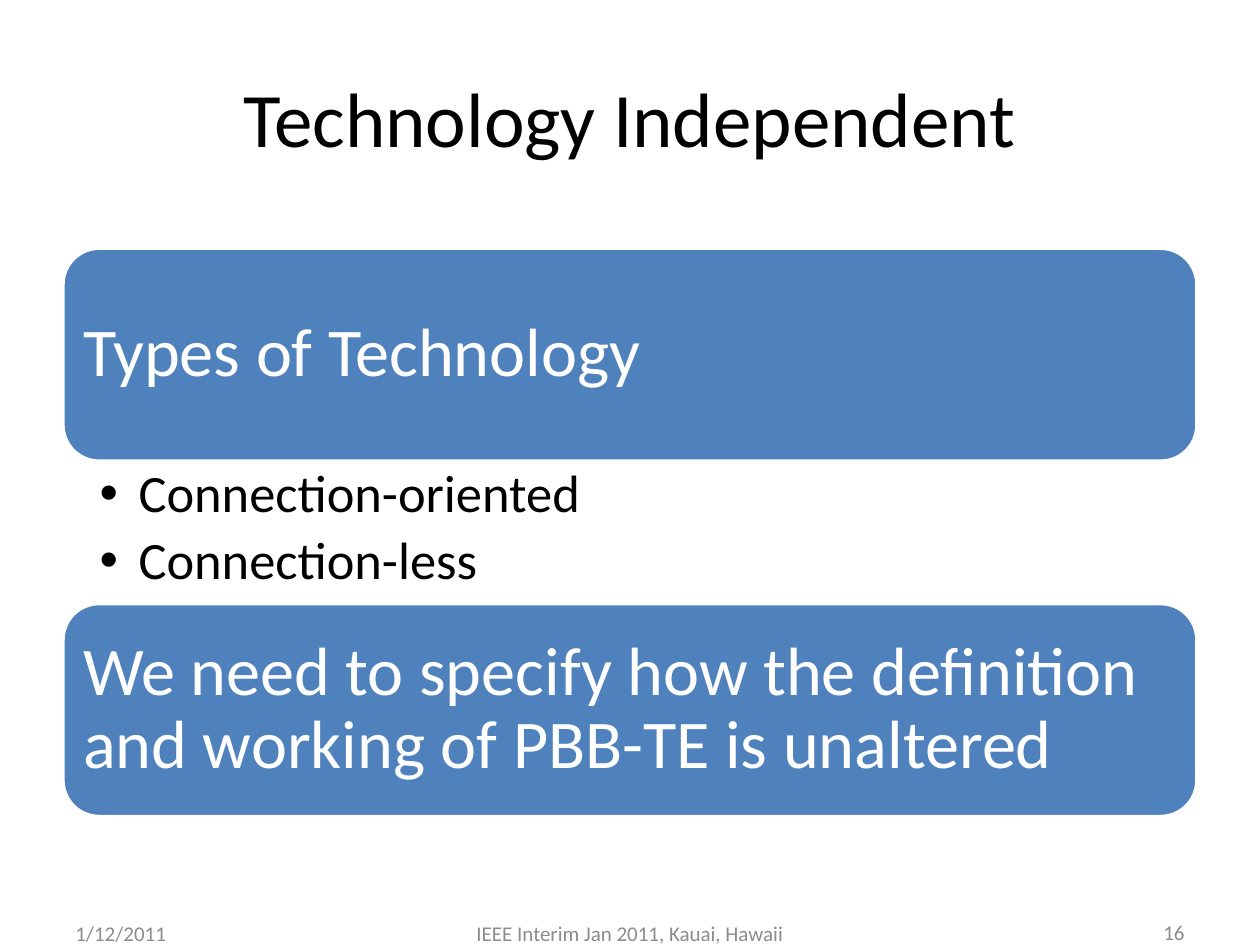
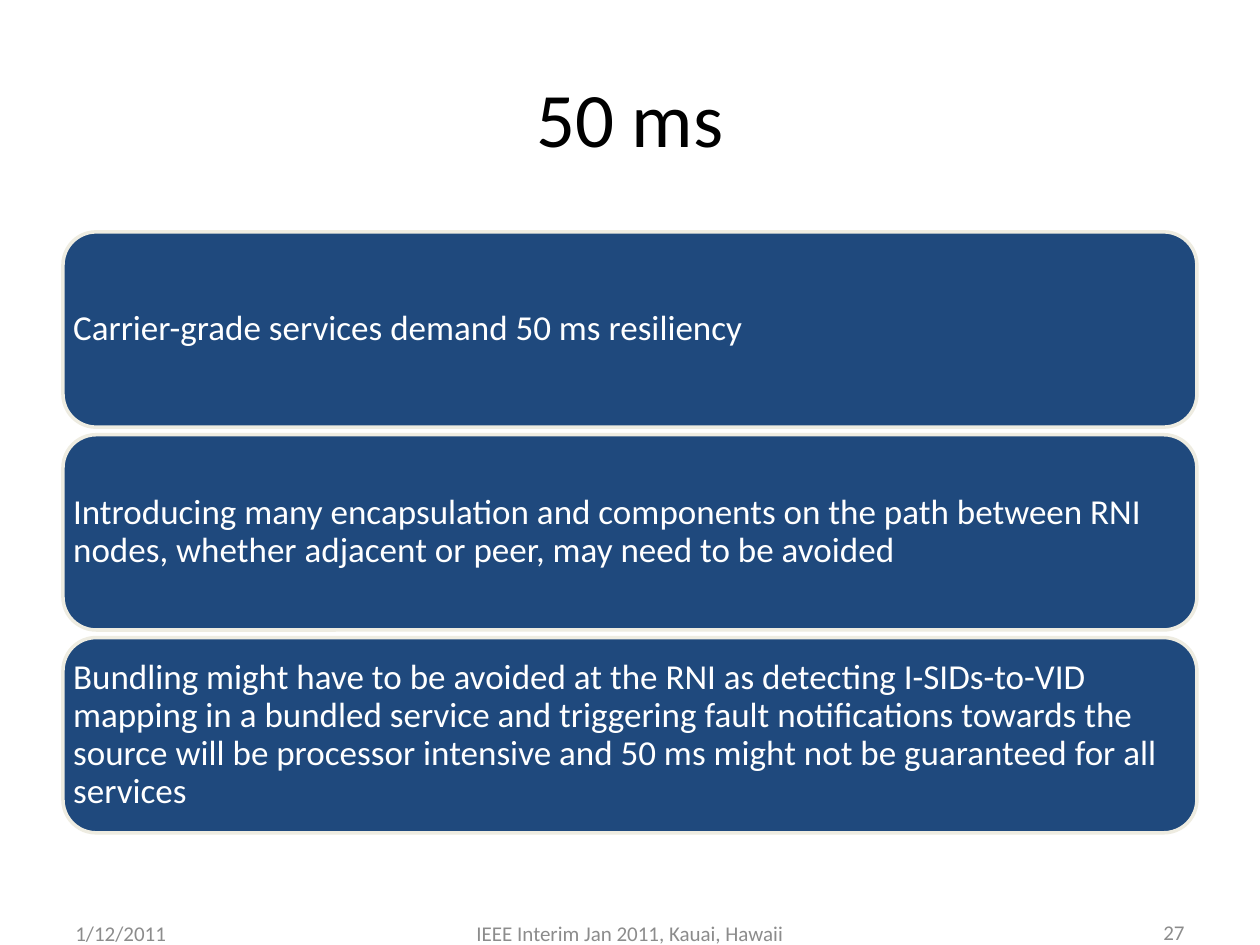
from lxml import etree
from pptx import Presentation
from pptx.dml.color import RGBColor
from pptx.enum.shapes import MSO_SHAPE
from pptx.enum.text import MSO_ANCHOR, PP_ALIGN
from pptx.oxml.ns import qn
from pptx.util import Inches, Pt

ROUND = MSO_SHAPE.ROUNDED_RECTANGLE
TOP, MID = MSO_ANCHOR.TOP, MSO_ANCHOR.MIDDLE
LEFT, CENTER, RIGHT = PP_ALIGN.LEFT, PP_ALIGN.CENTER, PP_ALIGN.RIGHT

BLACK = RGBColor(0x00, 0x00, 0x00)
WHITE = RGBColor(0xFF, 0xFF, 0xFF)
GRAY = RGBColor(0x8C, 0x8C, 0x8C)
BLUE = RGBColor(0x4F, 0x81, 0xBD)
NAVY = RGBColor(0x1F, 0x49, 0x7D)
CREAM = RGBColor(0xEE, 0xEC, 0xE1)

FONT = "Calibri"
COLS, ROWS = 20, 15
EDGE, SPAN = 1, 18
CURVE = 0.17
INSET = 0.29 * CURVE


class Deck:
    """Holds the deck's style and its current slide, placed on a 20 by 15 grid."""

    def __init__(self):
        self.prs = Presentation()
        self.prs.slide_width = Inches(10)
        self.prs.slide_height = Inches(7.5)
        self.slide = None

    def place(self, col, row, wide, high):
        """Turn grid units into left, top, width and height."""
        unit_x = self.prs.slide_width / COLS
        unit_y = self.prs.slide_height / ROWS
        return [round(n) for n in (col * unit_x, row * unit_y, wide * unit_x, high * unit_y)]

    def fill_in(self, frame, lines, size, color, align=LEFT, anchor=MID, pads=(0.1, 0.05, 0.1, 0.05)):
        """Fill a text frame, one run to a paragraph."""
        frame.word_wrap = True
        frame.vertical_anchor = anchor
        sides = [Inches(pad) for pad in pads]
        frame.margin_left, frame.margin_top, frame.margin_right, frame.margin_bottom = sides
        for i, line in enumerate(lines):
            para = frame.add_paragraph() if i else frame.paragraphs[0]
            para.alignment = align
            run = para.add_run()
            run.text = line
            run.font.name = FONT
            run.font.size = Pt(size)
            run.font.color.rgb = color
        return frame.paragraphs

    def text(self, spot, lines, size, color, **style):
        """Add a text box."""
        box = self.slide.shapes.add_textbox(*self.place(*spot))
        return self.fill_in(box.text_frame, lines, size, color, **style)

    def start(self, title, page):
        """Begin a slide with its title and footer."""
        self.slide = self.prs.slides.add_slide(self.prs.slide_layouts[5])
        head = self.slide.shapes.title
        head.left, head.top, head.width, head.height = self.place(EDGE, 0.6, SPAN, 2.5)
        self.fill_in(head.text_frame, [title], 44, BLACK, CENTER)
        feet = (
            (EDGE, 4.66, "1/12/2011", LEFT),
            (6.83, 6.34, "IEEE Interim Jan 2011, Kauai, Hawaii", CENTER),
            (14.34, 4.66, page, RIGHT),
        )
        for col, wide, words, align in feet:
            row = 14.4 if align == RIGHT else 14.42
            self.text((col, row, wide, 0.8), [words], 12, GRAY, align=align)

    def panel(self, row, high, words, size, fill, line, pad):
        """Add a full-width rounded panel, with pad measured from its edge."""
        box = self.slide.shapes.add_shape(ROUND, *self.place(EDGE, row, SPAN, high))
        box.adjustments[0] = CURVE
        box.shadow.inherit = False
        box.fill.solid()
        box.fill.fore_color.rgb = fill
        box.line.color.rgb = line
        box.line.width = Pt(2)
        gap = max(0, pad - INSET * box.height / Inches(1))
        paras = self.fill_in(box.text_frame, [words], size, WHITE, pads=(gap,) * 4)
        paras[0].line_spacing = 0.9

    def points(self, row, high, lines, size):
        """Add a bulleted list."""
        pads = (0.29, 0.05, 0.3, 0.05)
        paras = self.text((EDGE, row, SPAN, high), lines, size, BLACK, anchor=TOP, pads=pads)
        for para in paras:
            para.line_spacing = 0.9
            para.space_after = Pt(size * 0.2)
            props = para._p.get_or_add_pPr()
            props.set("marL", str(Inches(0.31)))
            props.set("indent", str(Inches(-0.31)))
            etree.SubElement(props, qn("a:buFont")).set("typeface", "Arial")
            etree.SubElement(props, qn("a:buChar")).set("char", "•")


def main():
    """Build both slides and save them."""
    deck = Deck()

    deck.start("Technology Independent", "16")
    top, high, room = 3.94, 3.38, 2.26
    look = (39, BLUE, WHITE, 0.16)
    deck.panel(top, high, "Types of Technology", *look)
    deck.points(top + high, room, ["Connection-oriented", "Connection-less"], 30)
    need = "We need to specify how the definition and working of PBB-TE is unaltered"
    deck.panel(top + high + room, high, need, *look)

    deck.start("50 ms", "27")
    claims = (
        "Carrier-grade services demand 50 ms resiliency",
        "Introducing many encapsulation and components on the path between RNI nodes, "
        "whether adjacent or peer, may need to be avoided",
        "Bundling might have to be avoided at the RNI as detecting I-SIDs-to-VID mapping "
        "in a bundled service and triggering fault notifications towards the source will be "
        "processor intensive and 50 ms might not be guaranteed for all services",
    )
    top, high, step = 3.68, 3.1, 3.22
    for i, claim in enumerate(claims):
        deck.panel(top + i * step, high, claim, 20, NAVY, CREAM, 0.08)

    deck.prs.save("out.pptx")


if __name__ == "__main__":
    main()
